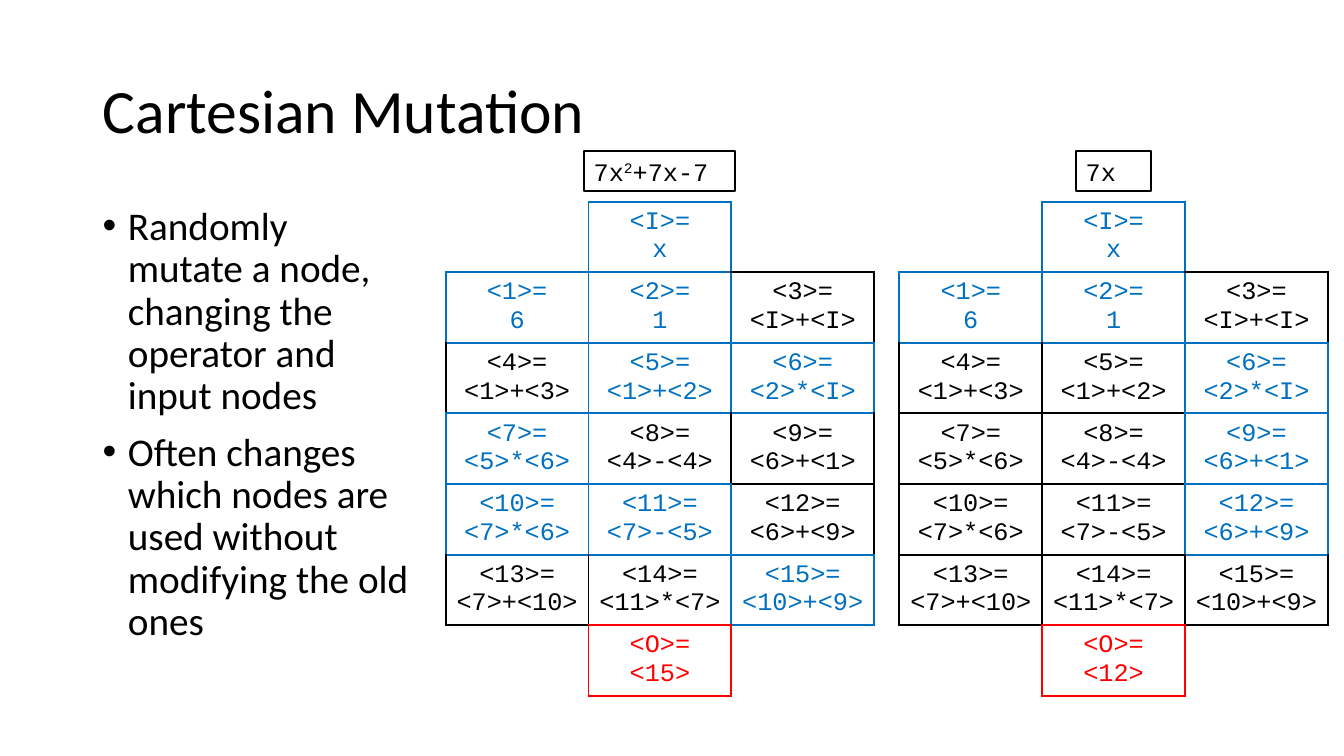
from lxml.etree import SubElement
from pptx import Presentation
from pptx.dml.color import RGBColor
from pptx.enum.shapes import MSO_SHAPE as Preset
from pptx.enum.text import MSO_ANCHOR as Anchor, MSO_AUTO_SIZE as AutoSize, PP_ALIGN as Align
from pptx.oxml.ns import qn
from pptx.util import Inches, Pt

COLORS = {"black": "000000", "blue": "0070C0", "red": "FF0000"}
EDGE_PRIORITY = [None, "black", "blue", "red"]
SIDES = {"lnL": (0, -1), "lnR": (0, 1), "lnT": (-1, 0), "lnB": (1, 0)}
OPERATIONS = ["6", "1", "<I>+<I>", "<1>+<3>", "<1>+<2>", "<2>*<I>", "<5>*<6>", "<4>-<4>",
              "<6>+<1>", "<7>*<6>", "<7>-<5>", "<6>+<9>", "<7>+<10>", "<11>*<7>", "<10>+<9>"]
COLUMNS, ROWS = 3, 7


def write(paragraph, text, font="Courier New", size=18, color="black", align=Align.LEFT,
          spacing=None, before=None, baseline=None):
    """Add a formatted run to a paragraph."""
    paragraph.alignment = align
    if spacing:
        paragraph.line_spacing = spacing
    if before:
        paragraph.space_before = Pt(before)
    run = paragraph.add_run()
    run.text = text
    run.font.name, run.font.size = font, Pt(size)
    run.font.color.rgb = RGBColor.from_string(COLORS[color])
    if baseline:
        run.font._element.set("baseline", str(baseline * 1000))


def next_paragraph(frame, index):
    """Return the first paragraph for index 0, or append one."""
    return frame.add_paragraph() if index else frame.paragraphs[0]


def node_grid(active, output):
    """Map (row, column) to the lines and colour of each node."""
    grid = {(0, 1): ("<I>=", "x", "blue"), (ROWS - 1, 1): ("<O>=", output, "red")}
    for index, operation in enumerate(OPERATIONS):
        row, column = divmod(index, COLUMNS)
        color = "blue" if index + 1 in active else "black"
        grid[row + 1, column] = (f"<{index + 1}>=", operation, color)
    return grid


class SlideBuilder:
    """Hold the current slide and its style."""

    def __init__(self, slide, heading_font="Calibri", line_width=1.5):
        """Store the slide, heading font and line width."""
        self.slide = slide
        self.heading_font = heading_font
        self.line_width = line_width

    def title(self, text, left, top, width, height):
        """Place and format the title placeholder."""
        shape = self.slide.shapes.title
        shape.left, shape.top = Inches(left), Inches(top)
        shape.width, shape.height = Inches(width), Inches(height)
        frame = shape.text_frame
        frame.vertical_anchor, frame.auto_size = Anchor.MIDDLE, AutoSize.NONE
        write(frame.paragraphs[0], text, font=self.heading_font, size=44, spacing=0.9)

    def bullets(self, items, left, top, width, height):
        """Add a bulleted list."""
        shape = self.slide.shapes.add_textbox(*map(Inches, (left, top, width, height)))
        frame = shape.text_frame
        frame.word_wrap = True
        for index, item in enumerate(items):
            paragraph = next_paragraph(frame, index)
            write(paragraph, item, font=self.heading_font, size=28, spacing=0.9, before=10)
            properties = paragraph._p.get_or_add_pPr()
            properties.set("marL", str(Inches(0.25)))
            properties.set("indent", str(Inches(-0.25)))
            SubElement(properties, qn("a:buFont")).set("typeface", "Arial")
            SubElement(properties, qn("a:buChar")).set("char", "•")

    def formula(self, parts, left, top, width, height):
        """Add an outlined box of (text, baseline) parts."""
        shape = self.slide.shapes.add_shape(
            Preset.RECTANGLE, *map(Inches, (left, top, width, height)))
        shape.shadow.inherit = False
        shape.fill.background()
        shape.line.color.rgb = RGBColor.from_string(COLORS["black"])
        shape.line.width = Pt(self.line_width)
        frame = shape.text_frame
        frame.word_wrap, frame.vertical_anchor = True, Anchor.TOP
        for text, baseline in parts:
            write(frame.paragraphs[0], text, baseline=baseline)

    def border(self, cell, side, color):
        """Draw one side of a cell, or clear it."""
        line = SubElement(cell._tc.get_or_add_tcPr(), qn(f"a:{side}"))
        line.set("w", str(Pt(self.line_width)))
        if color:
            fill = SubElement(line, qn("a:solidFill"))
            SubElement(fill, qn("a:srgbClr")).set("val", COLORS[color])
        else:
            SubElement(line, qn("a:noFill"))

    def node_table(self, grid, left, top, width, height):
        """Add a table of nodes whose shared edges take the stronger colour."""
        table = self.slide.shapes.add_table(
            ROWS, COLUMNS, *map(Inches, (left, top, width, height))).table
        table.first_row = table.horz_banding = False
        for row in range(ROWS):
            for column in range(COLUMNS):
                cell = table.cell(row, column)
                *lines, color = grid.get((row, column), (None,))
                for side, (down, right) in SIDES.items():
                    neighbor = grid.get((row + down, column + right), (None,))[-1]
                    self.border(cell, side, max(color, neighbor, key=EDGE_PRIORITY.index))
                cell.fill.background()
                cell.vertical_anchor = Anchor.MIDDLE
                for index, text in enumerate(lines):
                    write(next_paragraph(cell.text_frame, index), text,
                          color=color, align=Align.CENTER)


def main():
    """Build and save the presentation."""
    presentation = Presentation()
    presentation.slide_width, presentation.slide_height = Inches(13.33), Inches(7.5)
    builder = SlideBuilder(presentation.slides.add_slide(presentation.slide_layouts[5]))
    builder.title("Cartesian Mutation", 0.92, 0.4, 11.5, 1.45)
    builder.bullets(["Randomly mutate a node, changing the operator and input nodes",
                     "Often changes which nodes are used without modifying the old ones"],
                    0.92, 2, 3.25, 4.76)
    builder.node_table(node_grid({1, 2, 5, 6, 7, 10, 11, 15}, "<15>"), 4.42, 2, 4.25, 4.9)
    builder.node_table(node_grid({1, 2, 6, 9, 12}, "<12>"), 8.92, 2, 4.25, 4.9)
    builder.formula([("7x", None), ("2", 30), ("+7x-7", None)], 5.79, 1.5, 1.5, 0.4)
    builder.formula([("7x", None)], 10.67, 1.5, 0.75, 0.4)
    presentation.save("out.pptx")


if __name__ == "__main__":
    main()
